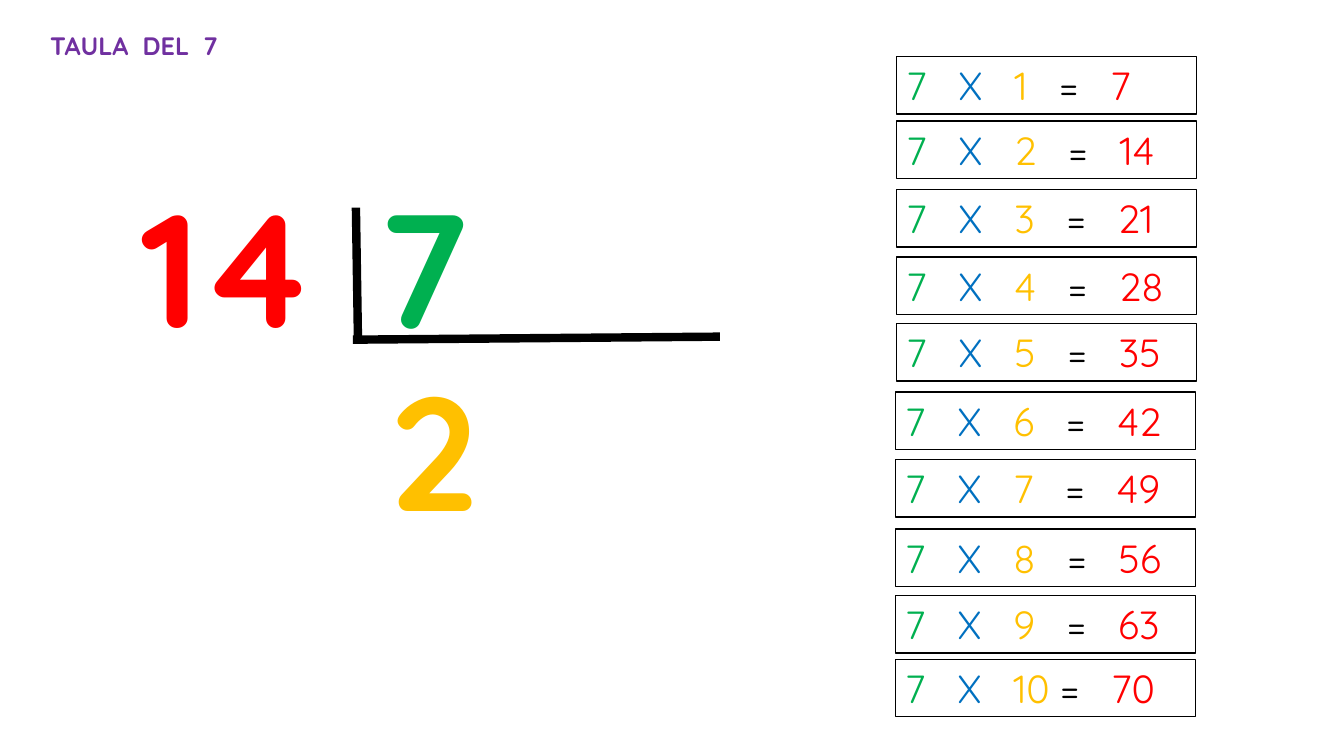
from lxml import etree
from pptx import Presentation
from pptx import util as u
from pptx.dml.color import RGBColor
from pptx.enum import shapes, text
from pptx.oxml.ns import qn

COLOURS = {
    "green": "00B050", "blue": "0070C0", "yellow": "FFC000",
    "red": "FF0000", "purple": "7030A0", "black": "000000", "white": "FFFFFF",
}
FACTOR = 7
ROW_TOPS = [0.56, 1.2, 1.88, 2.55, 3.21, 3.89, 4.56, 5.25, 5.91, 6.54]


def colour(name):
    return RGBColor.from_string(COLOURS[name])


def add_run(paragraph, words, *, size, fill, bold=False, font="Quicksand"):
    run = paragraph.add_run()
    run.text = words
    run.font.name = font
    run.font.size = u.Pt(size)
    run.font.bold = bold
    run.font.color.rgb = colour(fill)


class SlideBuilder:
    def __init__(self, slide):
        self.slide = slide

    def label(self, box, runs, *, size, bold=False, align=text.PP_ALIGN.LEFT):
        """Add a text box whose runs are (words, colour) pairs."""
        shape = self.slide.shapes.add_textbox(*map(u.Inches, box))
        frame = shape.text_frame
        frame.word_wrap = True
        frame.auto_size = text.MSO_AUTO_SIZE.SHAPE_TO_FIT_TEXT
        paragraph = frame.paragraphs[0]
        paragraph.alignment = align
        for words, fill in runs:
            add_run(paragraph, words, size=size, fill=fill, bold=bold)
        return shape

    def big_number(self, box, words, fill):
        self.label(box, [(words, fill)], size=115, bold=True,
                   align=text.PP_ALIGN.CENTER)

    def product_row(self, box, multiplier):
        gap = "   " if multiplier < 10 else " "
        shape = self.label(box, [
            (f"{FACTOR}   ", "green"),
            ("X   ", "blue"),
            (str(multiplier), "yellow"),
            (f"{gap}=   ", "black"),
            (str(FACTOR * multiplier), "red"),
        ], size=28)
        shape.fill.solid()
        shape.fill.fore_color.rgb = colour("white")
        shape.line.color.rgb = colour("black")
        shape.line.width = u.Pt(1)

    def line(self, *ends):
        connector = self.slide.shapes.add_connector(
            shapes.MSO_CONNECTOR.STRAIGHT, *map(u.Inches, ends))
        connector.line.color.rgb = colour("black")
        connector.line.width = u.Pt(6)
        etree.SubElement(connector._element.spPr, qn("a:effectLst"))


def main():
    presentation = Presentation()
    presentation.slide_width = u.Inches(13.33)
    presentation.slide_height = u.Inches(7.5)
    builder = SlideBuilder(
        presentation.slides.add_slide(presentation.slide_layouts[6]))

    builder.label((0.4, 0.25, 2.63, 0.4), [("TAULA  DEL  7", "purple")],
                  size=18, bold=True)

    builder.big_number((1.19, 1.61, 2.14, 2.04), "14", "red")
    builder.big_number((3.62, 1.61, 1.18, 2.04), "7", "green")
    builder.big_number((3.71, 3.43, 1.18, 2.04), "2", "yellow")
    builder.line(3.53, 2.06, 3.55, 3.35)
    builder.line(3.5, 3.37, 7.14, 3.34)

    for multiplier, top in enumerate(ROW_TOPS, start=1):
        left = 8.89 if multiplier <= 5 else 8.88
        builder.product_row((left, top, 2.98, 0.57), multiplier)

    presentation.save("out.pptx")


if __name__ == "__main__":
    main()
